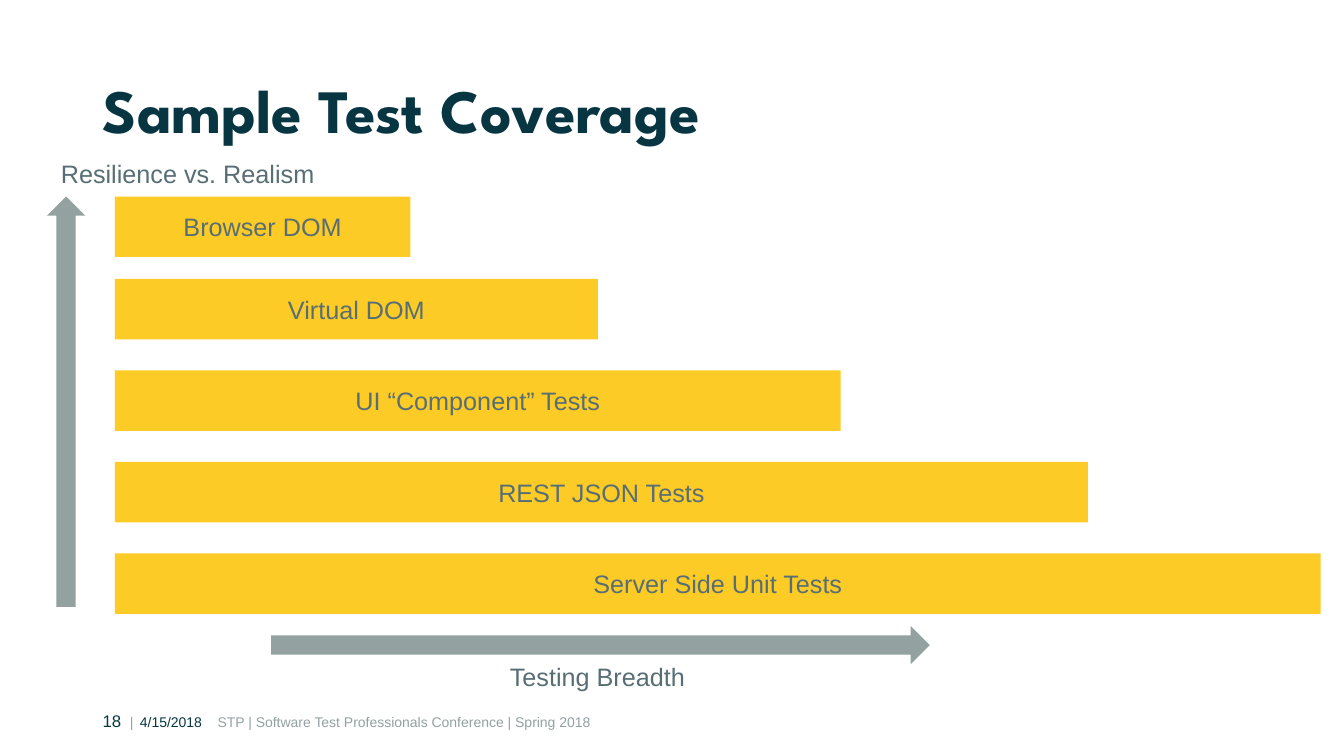
from lxml import etree
from pptx import Presentation, util as u
from pptx.dml.color import RGBColor
from pptx.enum import shapes, text
from pptx.oxml import ns

NAVY = RGBColor(0x07, 0x36, 0x42)
SLATE = RGBColor(0x58, 0x6E, 0x75)
GRAY = RGBColor(0x93, 0xA1, 0xA1)
YELLOW = RGBColor(0xFD, 0xCB, 0x26)

WIDTH, HEIGHT = u.Inches(13.33), u.Inches(7.5)
BODY_FONT, TITLE_FONT = "Arial", "League Spartan"

# Grid: 100 columns by 100 rows
BAR_LEFT, BAR_ROWS = 8.55, 8
TOP_BAR, SECOND_BAR, BAR_PITCH = 26, 36.9, 12.1
BARS = [
    ("Browser DOM", 21.98),
    ("Virtual DOM", 35.93),
    ("UI “Component” Tests", 54),
    ("REST JSON Tests", 72.4),
    ("Server Side Unit Tests", 89.72),
]
FOOTER = [
    ("18", 12, NAVY),
    ("\t|", 10, GRAY),
    ("\t4/15/2018", 10, NAVY),
    ("\tSTP | Software Test Professionals Conference | Spring 2018", 10, GRAY),
]
FOOTER_TABS = (0.27, 0.37, 1.14)


def grid(column, row, columns, rows):
    """Turn grid units into left, top, width and height."""
    return (int(WIDTH * column / 100), int(HEIGHT * row / 100),
            int(WIDTH * columns / 100), int(HEIGHT * rows / 100))


def add_span(para, words, size, color, font=BODY_FONT, bold=False):
    span = para.add_run()
    span.text = words
    span.font.size = u.Pt(size)
    span.font.name = font
    span.font.bold = bold
    span.font.color.rgb = color


def add_box(page, place, wrap=True):
    """Add an empty text box and return its text frame."""
    frame = page.shapes.add_textbox(*place).text_frame
    frame.word_wrap = wrap
    return frame


def add_block(page, kind, place, color):
    block = page.shapes.add_shape(kind, *place)
    block.shadow.inherit = False
    block.fill.solid()
    block.fill.fore_color.rgb = color
    block.line.fill.background()
    return block


def add_title(page, words):
    frame = add_box(page, grid(6.9, 5.33, 86.27, 19.33))
    frame.vertical_anchor = text.MSO_ANCHOR.MIDDLE
    para = frame.paragraphs[0]
    para.line_spacing = 0.9
    add_span(para, words, 44, NAVY, TITLE_FONT, True)


def add_centred_words(frame, words):
    para = frame.paragraphs[0]
    para.alignment = text.PP_ALIGN.CENTER
    add_span(para, words, 18, SLATE)


def add_bars(page):
    for index, (words, columns) in enumerate(BARS):
        row = SECOND_BAR + (index - 1) * BAR_PITCH if index else TOP_BAR
        bar = add_block(page, shapes.MSO_SHAPE.RECTANGLE,
                        grid(BAR_LEFT, row, columns, BAR_ROWS), YELLOW)
        bar.text_frame.vertical_anchor = text.MSO_ANCHOR.MIDDLE
        add_centred_words(bar.text_frame, words)


def add_axis(page, kind, arrow_place, words, label_place):
    """Add a block arrow and the label beside it."""
    add_block(page, kind, arrow_place, GRAY)
    add_centred_words(add_box(page, label_place, wrap=False), words)


def add_footer(page):
    para = add_box(page, grid(6.9, 93.33, 56.04, 4)).paragraphs[0]
    stops = etree.SubElement(para._p.get_or_add_pPr(), ns.qn("a:tabLst"))
    for position in FOOTER_TABS:
        etree.SubElement(stops, ns.qn("a:tab"),
                         pos=str(u.Inches(position)), algn="l")
    for words, size, color in FOOTER:
        add_span(para, words, size, color)


def main():
    deck = Presentation()
    deck.slide_width, deck.slide_height = WIDTH, HEIGHT
    page = deck.slides.add_slide(deck.slide_layouts[6])
    add_footer(page)
    add_title(page, "Sample Test Coverage")
    add_bars(page)
    add_axis(page, shapes.MSO_SHAPE.RIGHT_ARROW, grid(20.18, 82.8, 49, 5.07),
             "Testing Breadth", grid(36.76, 86.8, 15.38, 5.33))
    add_axis(page, shapes.MSO_SHAPE.UP_ARROW, grid(3.49, 26, 2.85, 54.27),
             "Resilience vs. Realism", grid(3.53, 20.27, 20.86, 5.33))
    deck.save("out.pptx")


if __name__ == "__main__":
    main()
